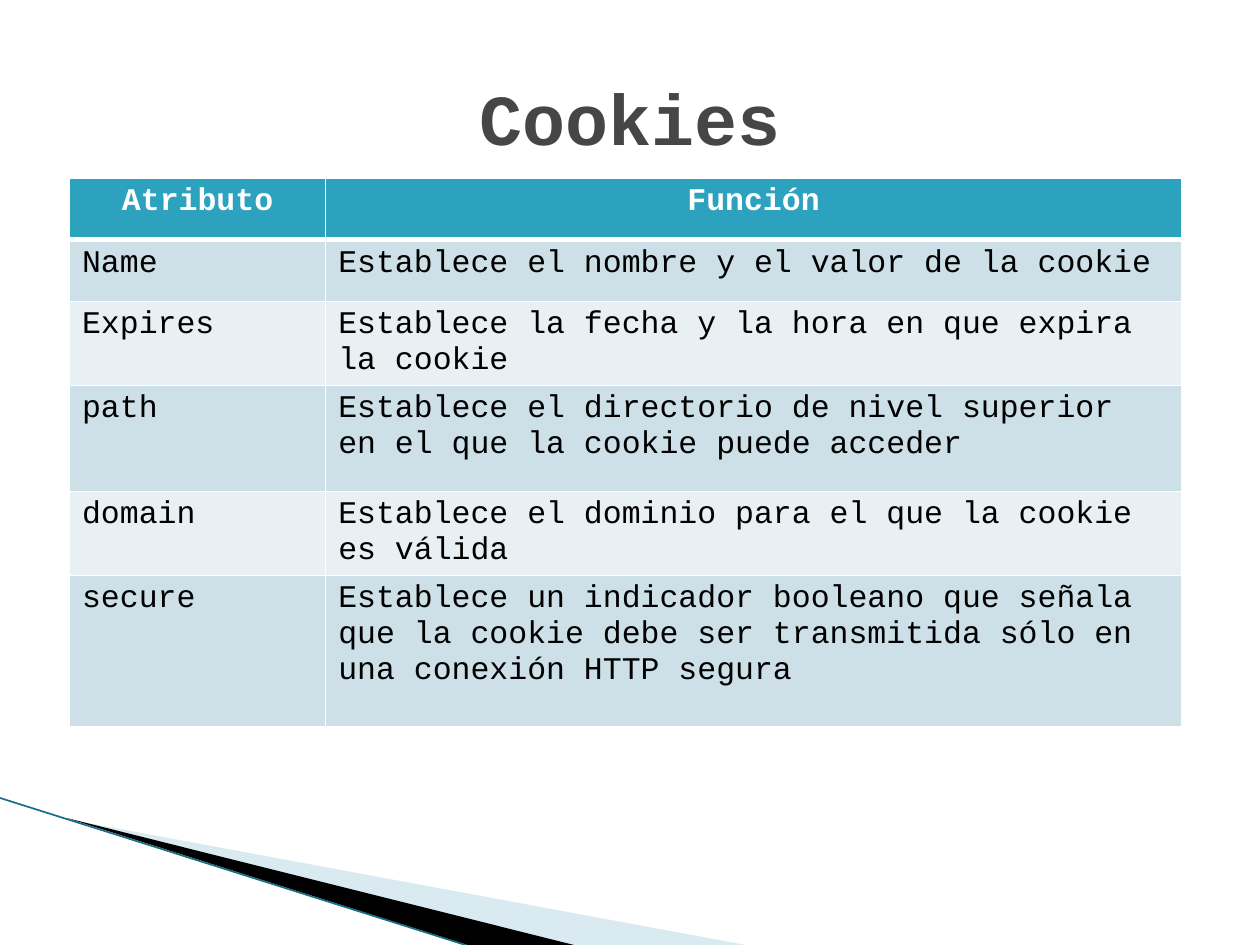
from lxml import etree
from pptx import Presentation
from pptx.dml.color import RGBColor
from pptx.enum import shapes, text
from pptx.oxml import ns
from pptx.util import Pt

FONT = "Courier New"
HEAD, ODD, EVEN = "2DA2BF", "CDE0E8", "E8F0F4"
ROWS = [
    ("Atributo", "Función"),
    ("Name", "Establece el nombre y el valor de la cookie"),
    ("Expires", "Establece la fecha y la hora en que expira la cookie"),
    ("path", "Establece el directorio de nivel superior en el que la cookie "
             "puede acceder"),
    ("domain", "Establece el dominio para el que la cookie es válida"),
    ("secure", "Establece un indicador booleano que señala que la cookie debe "
               "ser transmitida sólo en una conexión HTTP segura"),
]
TALL = [35.3, 35.3, 35.3, 60.5, 35.3, 86.4]
WIDE = [146.4, 489]


def paint(item, color):
    """Give a fill a solid colour."""
    item.solid()
    item.fore_color.rgb = RGBColor.from_string(color)


def sub(node, tag, **attrs):
    return etree.SubElement(node, ns.qn(tag), attrs)


def write(par, words, size, color, bold=False, align=None):
    par.alignment = align
    run = par.add_run()
    run.text = words
    font = run.font
    font.name, font.size, font.bold = FONT, Pt(size), bold
    font.color.rgb = RGBColor.from_string(color)


def edge(cell, side, width):
    """Draw one white cell border."""
    line = sub(cell._tc.get_or_add_tcPr(), f"a:ln{side}", w=str(Pt(width)))
    sub(sub(line, "a:solidFill"), "a:srgbClr", val="FFFFFF")


def wedge(slide, x, y, points, color, alpha=None):
    """Draw a filled outline from points relative to x, y."""
    spots = [(Pt(x + dx), Pt(y + dy)) for dx, dy in points]
    pen = slide.shapes.build_freeform(*spots[0], scale=1.0)
    pen.add_line_segments(spots[1:], close=True)
    shape = pen.convert_to_shape()
    shape.shadow.inherit = False
    paint(shape.fill, color)
    shape.line.fill.background()
    if alpha:
        tint = shape._element.spPr.find(".//" + ns.qn("a:srgbClr"))
        sub(tint, "a:alpha", val=str(alpha * 1000))


def corner(slide, x, y, w, h):
    """Decorate the bottom left corner."""
    # Pale and black wedges
    wedge(slide, x, y, [(39.6, 12.4), (w, h), (328, h)], "A0CBDC", 40)
    wedge(slide, x, y, [(38.2, 11.5), (328, h), (267, h)], "000000")
    # Slanted edge
    line = slide.shapes.add_connector(
        shapes.MSO_CONNECTOR.STRAIGHT, Pt(x), Pt(y), Pt(x + 266), Pt(y + h))
    line.line.width = Pt(0.95)
    line.line.color.rgb = RGBColor.from_string("176F82")
    sub(line._element.spPr, "a:effectLst")


def title(slide, x, y, w, h):
    box = slide.shapes.title
    box.left, box.top, box.width, box.height = map(Pt, (x, y, w, h))
    frame = box.text_frame
    frame.vertical_anchor = text.MSO_ANCHOR.MIDDLE
    write(frame.paragraphs[0], "Cookies", 41, "464646", True,
          text.PP_ALIGN.CENTER)


def grid(slide, x, y):
    """Place the table of attributes."""
    table = slide.shapes.add_table(
        len(ROWS), len(WIDE), Pt(x), Pt(y),
        Pt(sum(WIDE)), Pt(sum(TALL))).table
    for col, wide in zip(table.columns, WIDE):
        col.width = Pt(wide)
    for r, (row, tall) in enumerate(zip(ROWS, TALL)):
        table.rows[r].height = Pt(tall)
        top = r == 0
        fill = HEAD if top else (ODD if r % 2 else EVEN)
        for c, words in enumerate(row):
            cell = table.cell(r, c)
            for side in "LRTB":
                thick = (top and side == "B") or (r == 1 and side == "T")
                edge(cell, side, 3 if thick else 1)
            paint(cell.fill, fill)
            write(cell.text_frame.paragraphs[0], words, 18,
                  "FFFFFF" if top else "000000", top,
                  text.PP_ALIGN.CENTER if top else None)


def main():
    deck = Presentation()
    deck.slide_width, deck.slide_height = Pt(720), Pt(540)
    slide = deck.slides.add_slide(deck.slide_layouts[5])
    corner(slide, 0, 456, 426, 84)
    title(slide, 36, 21.6, 648, 90)
    grid(slide, 39.7, 101.6)
    deck.save("out.pptx")


if __name__ == "__main__":
    main()
